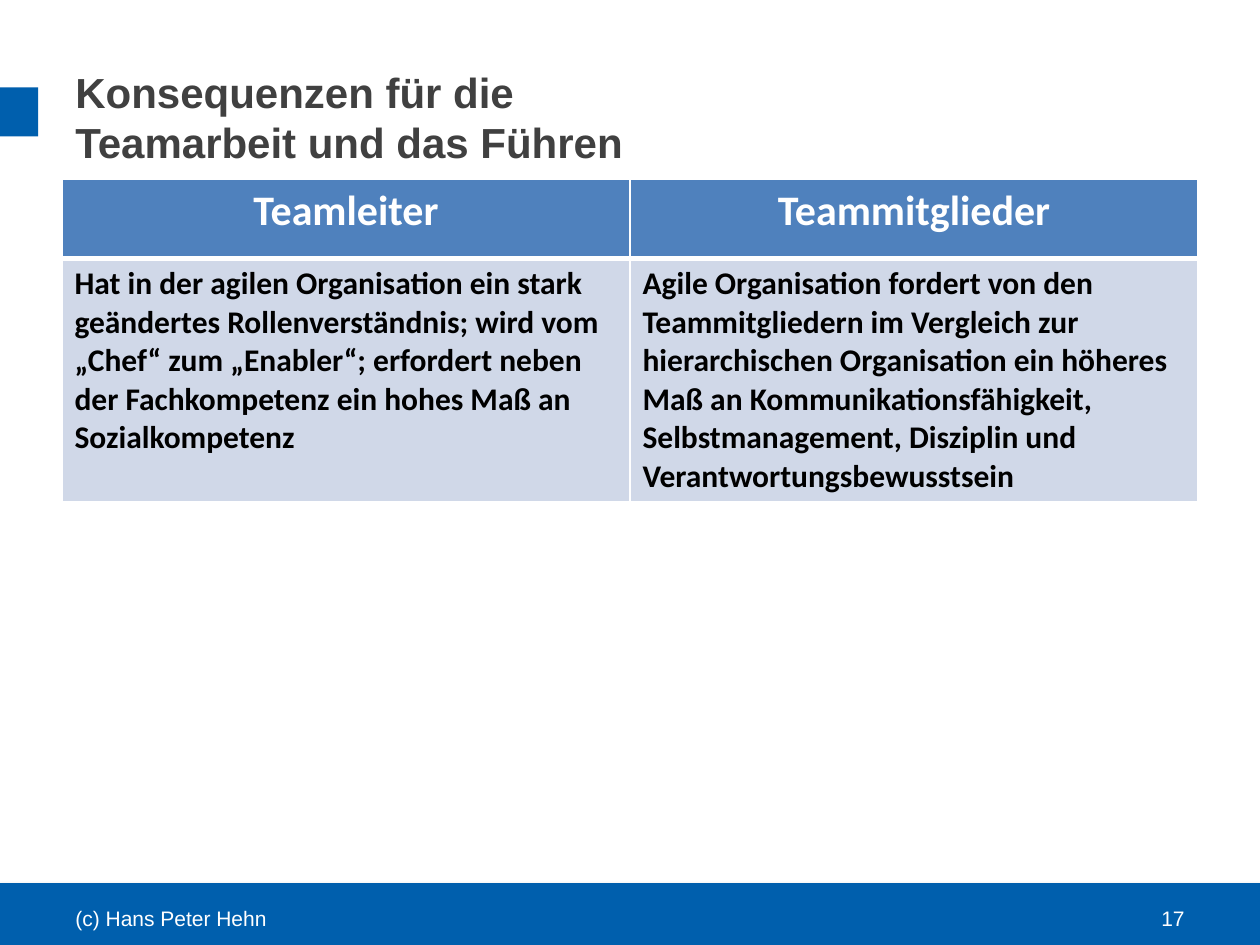
from lxml.etree import SubElement
from pptx import Presentation
from pptx.dml.color import RGBColor
from pptx.enum.shapes import MSO_SHAPE as Shape
from pptx.enum.text import MSO_ANCHOR as Anchor, PP_ALIGN as Align
from pptx.oxml.ns import qn
from pptx.util import Pt

TITLE = "Konsequenzen für die\vTeamarbeit und das Führen"
COLUMNS = [
    ("Teamleiter",
     "Hat in der agilen Organisation ein stark geändertes Rollenverständnis; "
     "wird vom „Chef“ zum „Enabler“; erfordert neben der Fachkompetenz ein "
     "hohes Maß an Sozialkompetenz"),
    ("Teammitglieder",
     "Agile Organisation fordert von den Teammitgliedern im Vergleich zur "
     "hierarchischen Organisation ein höheres Maß an Kommunikationsfähigkeit, "
     "Selbstmanagement, Disziplin und Verantwortungsbewusstsein"),
]
AUTHOR = "(c) Hans Peter Hehn"
PAGE_NUMBER = "17"

THEME = {
    "brand": "005FAD", "title": "404040", "white": "FFFFFF", "black": "000000",
    "header_fill": "4F81BD", "body_fill": "D0D8E8",
    "heading_font": "Arial", "table_font": "Calibri",
    "large": 24, "medium": 18, "small": 12,
}
WIDTH, HEIGHT, MARGIN = 720, 540, 36
TABLE_LEFT, TABLE_TOP = 35.4, 102.4
COLUMN_WIDTH, ROW_HEIGHTS = 324.6, (45.4, 139)


def color(name):
    """Return a theme colour."""
    return RGBColor.from_string(THEME[name])


def write(frame, text, size="small", font="heading_font", fill="white",
          bold=False, align=Align.LEFT):
    """Put formatted text into a text frame."""
    paragraph = frame.paragraphs[0]
    paragraph.text = text
    paragraph.alignment = align
    for run in paragraph.runs:
        run.font.name = THEME[font]
        run.font.size = Pt(THEME[size])
        run.font.bold = bold
        run.font.color.rgb = color(fill)


def add_text(slide, text, left, top, width, height, **style):
    """Add a vertically centred text box."""
    shape = slide.shapes.add_textbox(Pt(left), Pt(top), Pt(width), Pt(height))
    shape.text_frame.word_wrap = True
    shape.text_frame.vertical_anchor = Anchor.MIDDLE
    write(shape.text_frame, text, **style)


def add_bar(slide, left, top, width, height):
    """Add a plain rectangle in the brand colour."""
    shape = slide.shapes.add_shape(
        Shape.RECTANGLE, Pt(left), Pt(top), Pt(width), Pt(height))
    shape.shadow.inherit = False
    shape.fill.solid()
    shape.fill.fore_color.rgb = color("brand")
    shape.line.fill.background()
    return shape


def add_shadow(shape):
    """Give a shape a soft shadow below it."""
    effects = shape.element.spPr.find(qn("a:effectLst"))
    shadow = SubElement(effects, qn("a:outerShdw"), blurRad=str(Pt(3.1)),
                        dist=str(Pt(1.8)), dir="5400000", rotWithShape="0")
    tint = SubElement(shadow, qn("a:srgbClr"), val=THEME["black"])
    SubElement(tint, qn("a:alpha"), val="35000")


def format_cell(cell, fill, bottom_width):
    """Set the white borders and the fill of a cell."""
    properties = cell._tc.get_or_add_tcPr()
    for side, width in zip("LRTB", (1, 1, 1, bottom_width)):
        line = SubElement(properties, qn(f"a:ln{side}"), w=str(Pt(width)))
        solid = SubElement(line, qn("a:solidFill"))
        SubElement(solid, qn("a:srgbClr"), val=THEME["white"])
    cell.fill.solid()
    cell.fill.fore_color.rgb = color(fill)


def add_comparison(slide):
    """Add the table that sets leader and members side by side."""
    table = slide.shapes.add_table(
        len(ROW_HEIGHTS), len(COLUMNS), Pt(TABLE_LEFT), Pt(TABLE_TOP),
        Pt(COLUMN_WIDTH * len(COLUMNS)), Pt(sum(ROW_HEIGHTS))).table
    for row, height in zip(table.rows, ROW_HEIGHTS):
        row.height = Pt(height)
    for index, (heading, body) in enumerate(COLUMNS):
        table.columns[index].width = Pt(COLUMN_WIDTH)
        header_cell, body_cell = table.cell(0, index), table.cell(1, index)
        format_cell(header_cell, "header_fill", 3)
        format_cell(body_cell, "body_fill", 1)
        write(header_cell.text_frame, heading, size="large", font="table_font",
              bold=True, align=Align.CENTER)
        write(body_cell.text_frame, body, size="medium", font="table_font",
              fill="black", bold=True)


def main():
    """Build and save the slide."""
    presentation = Presentation()
    presentation.slide_width, presentation.slide_height = Pt(WIDTH), Pt(HEIGHT)
    slide = presentation.slides.add_slide(presentation.slide_layouts[6])
    add_shadow(add_bar(slide, -1.5, 504.7, 730, 39))
    add_bar(slide, -1.5, 50, 23.3, 28)
    add_comparison(slide)
    add_text(slide, TITLE, MARGIN, 21.6, WIDTH - 2 * MARGIN, 90,
             size="large", fill="title", bold=True)
    footer_width = 168
    add_text(slide, AUTHOR, MARGIN, 510.5, footer_width, 28.8)
    add_text(slide, PAGE_NUMBER, WIDTH - MARGIN - footer_width, 510,
             footer_width, 28.8, align=Align.RIGHT)
    presentation.save("out.pptx")


if __name__ == "__main__":
    main()
